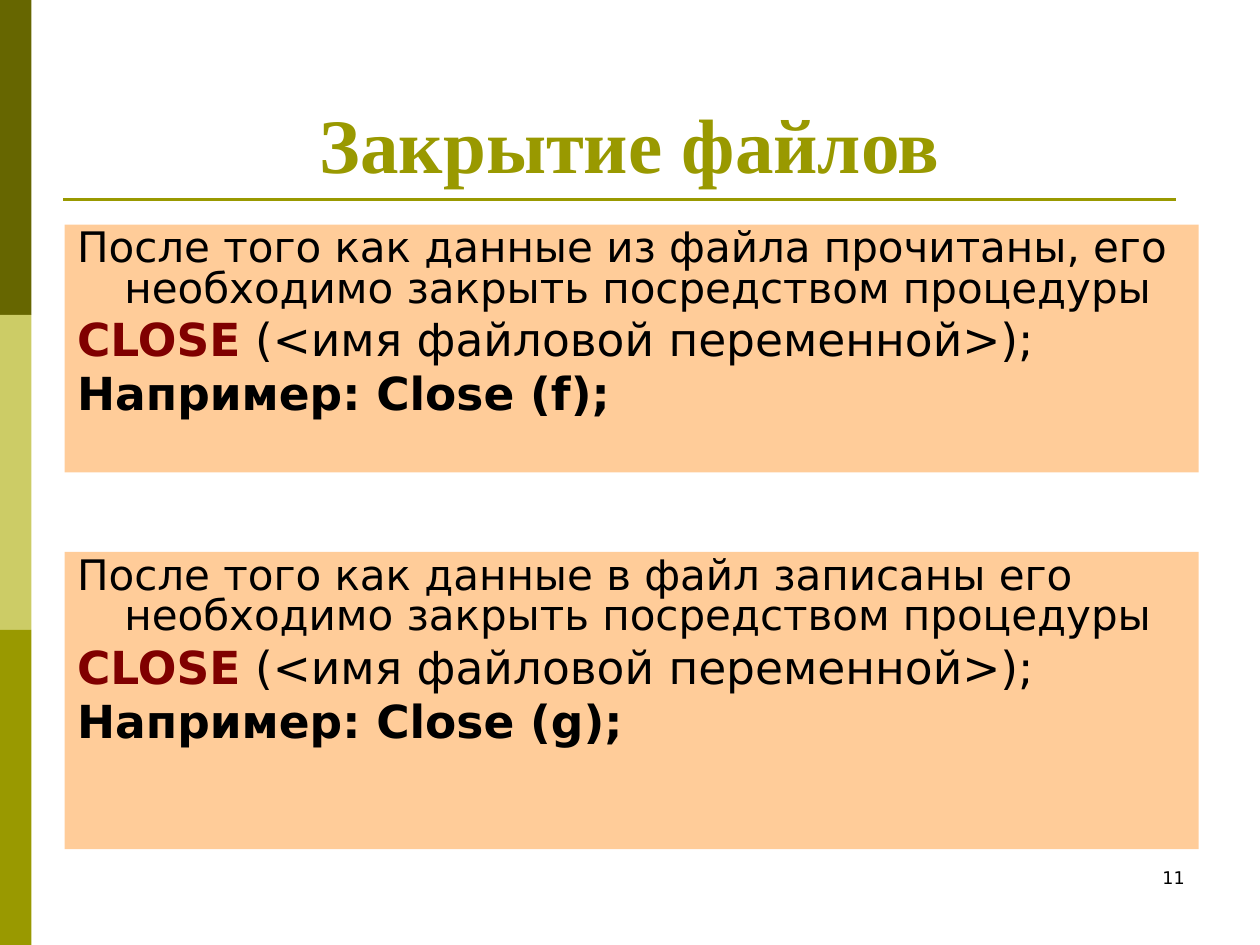
"""Build the slide on closing files in Pascal."""
from dataclasses import dataclass

from lxml.etree import SubElement
from pptx import Presentation
from pptx.dml.color import RGBColor as Rgb
from pptx.enum.shapes import MSO_CONNECTOR as Link, MSO_SHAPE as Kind
from pptx.enum.text import MSO_ANCHOR as Anchor, PP_ALIGN as Align
from pptx.oxml.ns import qn
from pptx.util import Pt


@dataclass(frozen=True)
class Theme:
    head: str = "Times New Roman"
    body: str = "DejaVu Sans"
    olive: str = "999900"
    dark: str = "666600"
    light: str = "CCCC66"
    peach: str = "FFCC99"
    red: str = "800000"
    ink: str = "000000"
    title: int = 44
    text: int = 24
    code: int = 26
    small: int = 10


LOOK = Theme()
WIDE, HIGH = 720, 540
TITLE = "Закрытие файлов"
PAGE = "11"
BANDS = [LOOK.dark, LOOK.light, LOOK.olive]
PANELS = [
    (128.3, 141.7, "После того как данные из файла прочитаны, его", "f"),
    (315.3, 170, "После того как данные в файл записаны его", "g"),
]
TAIL = " необходимо закрыть посредством процедуры"
CALL = " (<имя файловой переменной>);"


def write(para, text, size=LOOK.text, font=LOOK.body, color=LOOK.ink,
          bold=False, align=Align.LEFT):
    para.alignment = align
    run = para.add_run()
    run.text = text
    face = run.font
    face.size, face.name, face.bold = Pt(size), font, bold
    face.color.rgb = Rgb.from_string(color)


def block(slide, left, top, width, height, color):
    rect = slide.shapes.add_shape(
        Kind.RECTANGLE, Pt(left), Pt(top), Pt(width), Pt(height))
    rect.shadow.inherit = False
    rect.fill.solid()
    rect.fill.fore_color.rgb = Rgb.from_string(color)
    rect.line.fill.background()
    return rect


def panel(slide, top, height, start, name):
    frame = block(slide, 37, top, 648, height, LOOK.peach).text_frame
    frame.word_wrap = True
    frame.vertical_anchor = Anchor.TOP
    rows = [
        [(start + TAIL, {})],
        [("CLOSE", {"size": LOOK.code, "color": LOOK.red, "bold": True}),
         (CALL, {"size": LOOK.code})],
        [(f"Например: Close ({name});", {"size": LOOK.code, "bold": True})],
    ]
    for i, row in enumerate(rows):
        para = frame.add_paragraph() if i else frame.paragraphs[0]
        para.line_spacing = 0.8
        para.space_before = Pt(6)
        props = para._p.get_or_add_pPr()
        props.set("marL", str(Pt(27)))
        props.set("indent", str(Pt(-27)))
        for text, form in row:
            write(para, text, **form)


def main():
    deck = Presentation()
    deck.slide_width, deck.slide_height = Pt(WIDE), Pt(HIGH)
    slide = deck.slides.add_slide(deck.slide_layouts[5])

    step = HIGH / len(BANDS)
    for i, color in enumerate(BANDS):
        block(slide, 0, i * step, 18, step, color)

    rule = slide.shapes.add_connector(
        Link.STRAIGHT, Pt(36), Pt(114), Pt(672), Pt(114))
    rule.line.color.rgb = Rgb.from_string(LOOK.olive)
    rule.line.width = Pt(1.5)
    SubElement(rule._element.spPr, qn("a:effectLst"))

    title = slide.shapes.title
    title.left, title.top, title.width, title.height = map(
        Pt, (36, 21.6, 648, 90))
    title.text_frame.vertical_anchor = Anchor.BOTTOM
    write(title.text_frame.paragraphs[0], TITLE, size=LOOK.title,
          font=LOOK.head, color=LOOK.olive, bold=True, align=Align.CENTER)

    for item in PANELS:
        panel(slide, *item)

    page = slide.shapes.add_textbox(Pt(516), Pt(492), Pt(168), Pt(36))
    page.text_frame.word_wrap = True
    write(page.text_frame.paragraphs[0], PAGE, size=LOOK.small,
          align=Align.RIGHT)

    deck.save("out.pptx")


if __name__ == "__main__":
    main()
